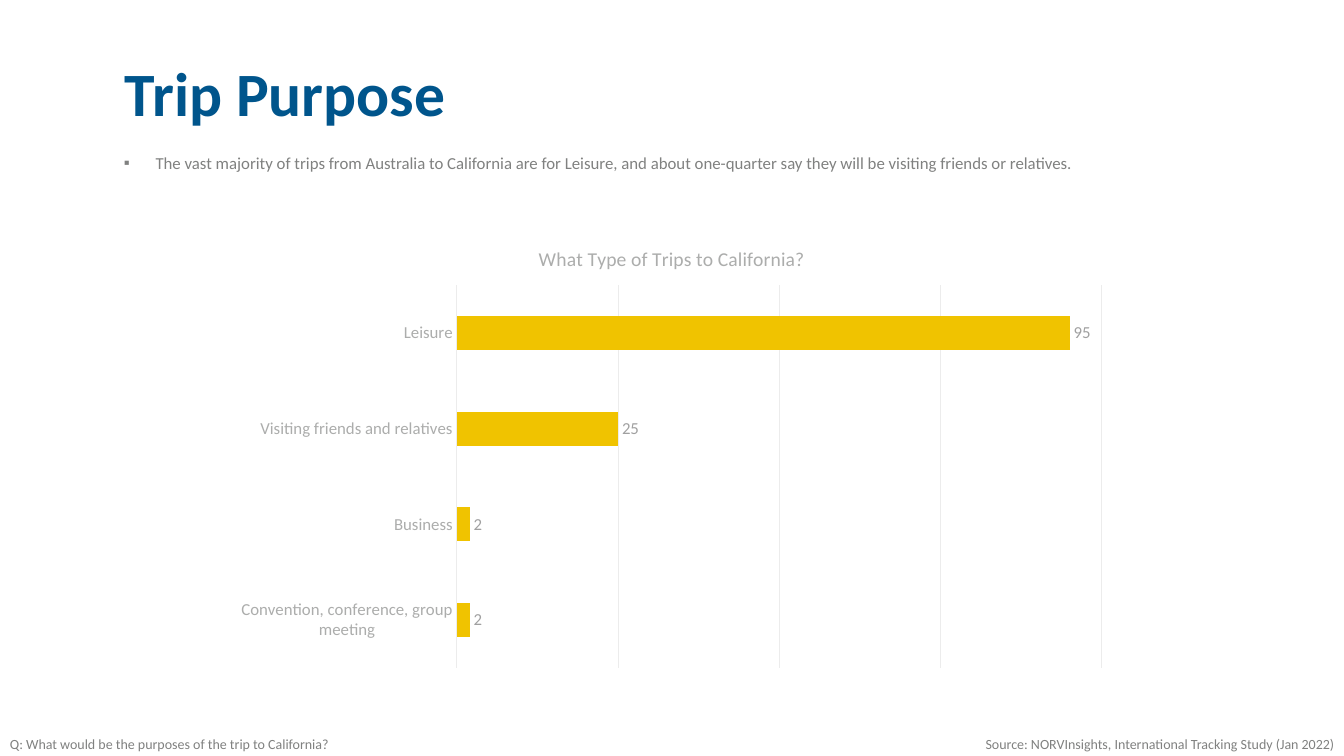
from lxml import etree
from pptx import Presentation
from pptx.chart.data import CategoryChartData
from pptx.dml.color import RGBColor
from pptx.enum.chart import XL_CHART_TYPE, XL_LABEL_POSITION, XL_TICK_LABEL_POSITION, XL_TICK_MARK
from pptx.enum.text import PP_ALIGN
from pptx.oxml import parse_xml
from pptx.oxml.ns import nsdecls, qn
from pptx.util import Cm, Pt

BAR = XL_CHART_TYPE.BAR_CLUSTERED
OUTSIDE = XL_LABEL_POSITION.OUTSIDE_END
NO_LABELS = XL_TICK_LABEL_POSITION.NONE
NO_TICK = XL_TICK_MARK.NONE
LEFT, RIGHT = PP_ALIGN.LEFT, PP_ALIGN.RIGHT

FACE = "Calibri"
COLORS = {"title": "00558C", "text": "808180", "axis": "ACADAC",
          "value": "A0A0A0", "grid": "ECECEC", "bar": "F0C300"}
TRIPS = {"Leisure": 95, "Visiting friends and relatives": 25,
         "Business": 2, "Convention, conference, group meeting": 2}


def style(font, size, color, bold=False):
    font.name = FACE
    font.size = Pt(size)
    font.bold = bold
    font.color.rgb = RGBColor.from_string(COLORS[color])


def add_text(text, box, size, color, bold=False, align=LEFT):
    """Add a one-paragraph text box, box in cm, and return the paragraph."""
    frame = slide.shapes.add_textbox(*map(Cm, box)).text_frame
    frame.word_wrap = True
    para = frame.paragraphs[0]
    para.alignment = align
    run = para.add_run()
    run.text = text
    style(run.font, size, color, bold)
    return para


prs = Presentation()
prs.slide_width, prs.slide_height = Cm(33.87), Cm(19.05)
slide = prs.slides.add_slide(prs.slide_layouts[6])

# Heading and finding
title = add_text("Trip Purpose", (2.9, 1.37, 28.1, 5), 44, "title", bold=True)
title.line_spacing = Pt(50)
title.space_before = Pt(10)

point = add_text("The vast majority of trips from Australia to California are for Leisure, "
                 "and about one-quarter say they will be visiting friends or relatives.",
                 (2.87, 3.73, 28.85, 1.27), 12, "text")
props = point._p.get_or_add_pPr()
props.set("marL", str(Cm(0.8)))
props.set("indent", str(-Cm(0.8)))
etree.SubElement(props, qn("a:buFont")).set("typeface", "Arial")
etree.SubElement(props, qn("a:buChar")).set("char", "▪")

# Bar chart
data = CategoryChartData(number_format="0")
data.categories = list(TRIPS)
data.add_series("Series 1", list(TRIPS.values()))
chart = slide.shapes.add_chart(BAR, Cm(5.64), Cm(5.72), Cm(22.58), Cm(11.33), data).chart
style(chart.font, 10, "text")
chart.has_legend = False
chart.has_title = True
head = chart.chart_title.text_frame.paragraphs[0].add_run()
head.text = "What Type of Trips to California?"
style(head.font, 14, "axis")
chart.chart_title.include_in_layout = False

cats, vals = chart.category_axis, chart.value_axis
for axis in (cats, vals):
    axis.major_tick_mark = axis.minor_tick_mark = NO_TICK
    style(axis.tick_labels.font, 12, "axis")
cats.reverse_order = True
cats.has_major_gridlines = False
vals.minimum_scale, vals.maximum_scale, vals.major_unit = 0, 100, 25
vals.tick_label_position = NO_LABELS
vals.format.line.fill.background()
vals.has_major_gridlines = True
for line in (cats.format.line, vals.major_gridlines.format.line):
    line.color.rgb = RGBColor.from_string(COLORS["grid"])
    line.width = Pt(0.75)

plot = chart.plots[0]
plot.gap_width = 182
plot.vary_by_categories = False
bars = plot.series[0]
bars.format.fill.solid()
bars.format.fill.fore_color.rgb = RGBColor.from_string(COLORS["bar"])
labels = bars.data_labels
labels.show_value = True
labels.number_format, labels.number_format_is_linked = "0", False
labels.position = OUTSIDE
style(labels.font, 12, "value")

# Inner plot area as fractions of the chart
area = chart._chartSpace.chart.plotArea
for old in area.findall(qn("c:layout")):
    area.remove(old)
sides = {"x": 0.26, "y": 0.13, "w": 0.72, "h": 0.85}
area.insert(0, parse_xml(
    f'<c:layout {nsdecls("c")}><c:manualLayout><c:layoutTarget val="inner"/>'
    '<c:xMode val="edge"/><c:yMode val="edge"/>'
    + "".join(f'<c:{side} val="{part}"/>' for side, part in sides.items())
    + "</c:manualLayout></c:layout>"))

# Footer
add_text("Q: What would be the purposes of the trip to California?",
         (0, 18.42, 9.91, 0.68), 10, "text")
add_text("Source: NORVInsights, International Tracking Study (Jan 2022)",
         (18.8, 18.42, 15.07, 0.68), 10, "text", align=RIGHT)

prs.save("out.pptx")
